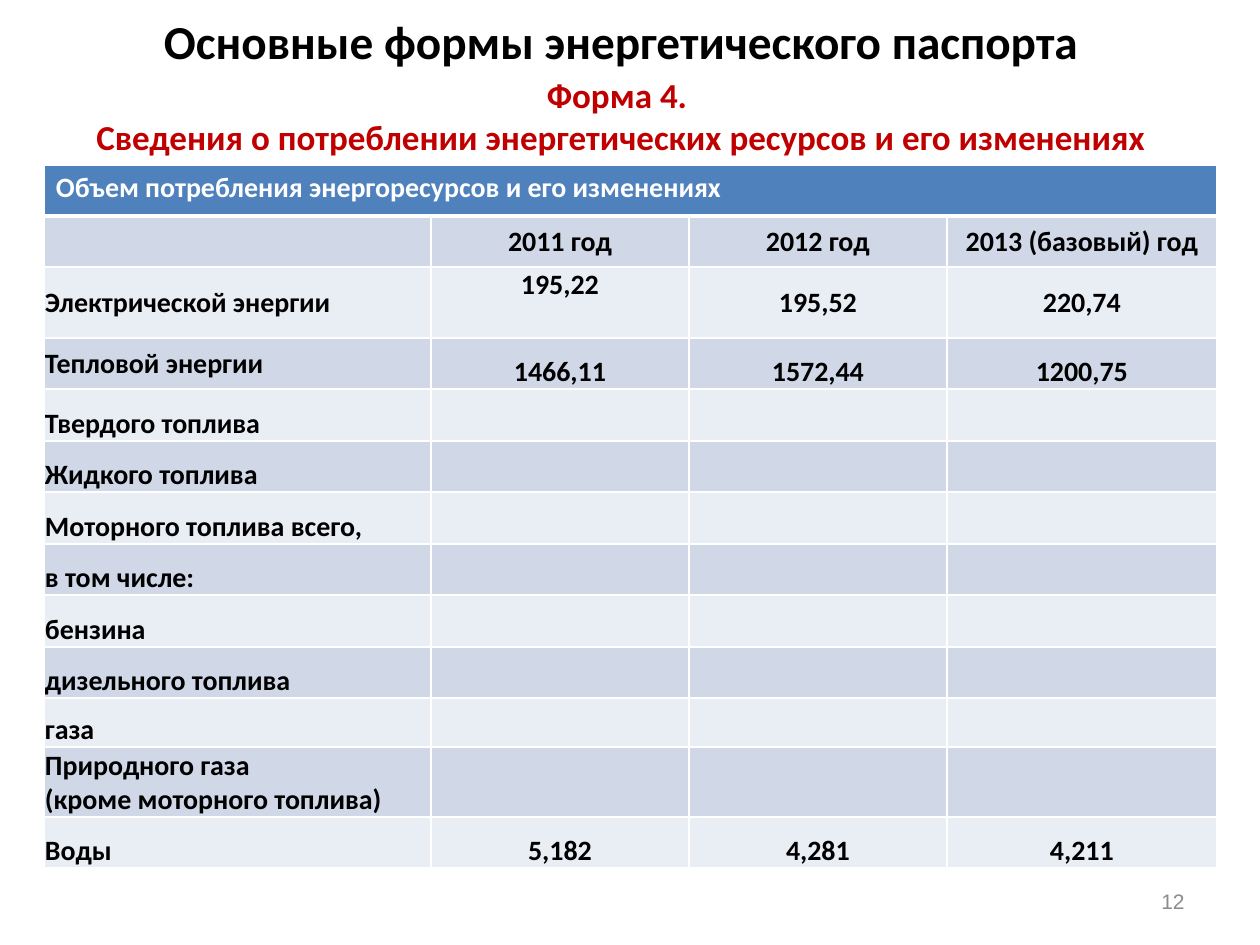
from dataclasses import dataclass

from lxml import etree
from pptx import Presentation
from pptx.dml.color import RGBColor
from pptx.enum.text import MSO_ANCHOR, PP_ALIGN
from pptx.oxml.ns import qn
from pptx.slide import Slide
from pptx.util import Pt

LEFT, CENTER, RIGHT = PP_ALIGN.LEFT, PP_ALIGN.CENTER, PP_ALIGN.RIGHT
TOP, MIDDLE, BOTTOM = MSO_ANCHOR.TOP, MSO_ANCHOR.MIDDLE, MSO_ANCHOR.BOTTOM
BLACK = RGBColor(0x00, 0x00, 0x00)
WHITE = RGBColor(0xFF, 0xFF, 0xFF)
RED = RGBColor(0xC0, 0x00, 0x00)
GRAY = RGBColor(0x8C, 0x8C, 0x8C)
BLUE = RGBColor(0x4F, 0x81, 0xBD)
BANDS = RGBColor(0xD0, 0xD8, 0xE8), RGBColor(0xE9, 0xED, 0xF4)

COLUMN_WIDTHS = [387, 258, 258, 270]
ROW_HEIGHTS = [51, 51, 71, 51, 52, 51, 52, 51, 52, 51, 49, 70, 51]
TABLE_TITLE = "Объем потребления энергоресурсов и его изменениях"
ROWS = [
    (["", "2011 год", "2012 год", "2013 (базовый) год"], [MIDDLE] * 4),
    (["Электрической энергии", "195,22", "195,52", "220,74"], [MIDDLE, TOP, MIDDLE, MIDDLE]),
    (["Тепловой энергии", "1466,11", "1572,44", "1200,75"], [MIDDLE, BOTTOM, BOTTOM, BOTTOM]),
    *[
        ([resource, "", "", ""], [BOTTOM] * 4)
        for resource in (
            "Твердого топлива",
            "Жидкого топлива",
            "Моторного топлива всего,",
            "в том числе:",
            "бензина",
            "дизельного топлива",
            "газа",
            "Природного газа\n(кроме моторного топлива)",
        )
    ],
    (["Воды", "5,182", "4,281", "4,211"], [BOTTOM] * 4),
]


def px(length):
    """Turn pixels into EMU."""
    return round(length * 914400 / 126)


@dataclass
class SlideBuilder:
    """Holds the slide and its text style and draws each kind of element."""

    slide: Slide
    font: str = "Calibri"
    bold: bool = True

    def add_lines(self, paragraph, lines, size, color, align, font=None, bold=None):
        """Add lines to one paragraph, run by run."""
        paragraph.alignment = align
        for index, line in enumerate(lines):
            if index:
                paragraph.add_line_break()
            run = paragraph.add_run()
            run.text = line
            run.font.name = font or self.font
            run.font.size = Pt(size)
            run.font.bold = self.bold if bold is None else bold
            run.font.color.rgb = color

    def text(self, box, lines, size, color, align=CENTER, **style):
        """Add a text box centred vertically."""
        frame = self.slide.shapes.add_textbox(*map(px, box)).text_frame
        frame.word_wrap = True
        frame.vertical_anchor = MIDDLE
        self.add_lines(frame.paragraphs[0], lines, size, color, align, **style)

    def border(self, cell, side, width):
        """Draw a white line on one side of a cell."""
        line = etree.SubElement(cell._tc.get_or_add_tcPr(), qn(f"a:ln{side}"), w=str(Pt(width)))
        fill = etree.SubElement(line, qn("a:solidFill"))
        etree.SubElement(fill, qn("a:srgbClr"), val=str(WHITE))

    def cell(self, cell, text, fill, color=BLACK, align=LEFT, anchor=TOP, margins=(1, 1, 1, 0), bottom=1):
        """Style and fill in one table cell."""
        for side, width in zip("LRTB", (1, 1, 1, bottom)):
            self.border(cell, side, width)
        cell.fill.solid()
        cell.fill.fore_color.rgb = fill
        cell.margin_left, cell.margin_top, cell.margin_right, cell.margin_bottom = map(px, margins)
        cell.vertical_anchor = anchor
        for index, line in enumerate(text.split("\n") if text else []):
            frame = cell.text_frame
            paragraph = frame.add_paragraph() if index else frame.paragraphs[0]
            self.add_lines(paragraph, [line], 16, color, align)

    def table(self, left, top, title, rows):
        """Add the banded table under a merged title row."""
        box = left, top, sum(COLUMN_WIDTHS), sum(ROW_HEIGHTS)
        frame = self.slide.shapes.add_table(len(ROW_HEIGHTS), len(COLUMN_WIDTHS), *map(px, box))
        table = frame.table
        for column, width in zip(table.columns, COLUMN_WIDTHS):
            column.width = px(width)
        for row, height in zip(table.rows, ROW_HEIGHTS):
            row.height = px(height)
        for index in range(len(COLUMN_WIDTHS)):
            self.cell(table.cell(0, index), "" if index else title, BLUE, WHITE, margins=(12, 6, 12, 6), bottom=3)
        table.cell(0, 0).merge(table.cell(0, len(COLUMN_WIDTHS) - 1))
        for row_index, (texts, anchors) in enumerate(rows, 1):
            fill = BANDS[(row_index - 1) % 2]
            for index, (text, anchor) in enumerate(zip(texts, anchors)):
                align = CENTER if index else LEFT
                self.cell(table.cell(row_index, index), text, fill, align=align, anchor=anchor)


def main():
    """Build and save the energy passport slide."""
    presentation = Presentation()
    presentation.slide_width, presentation.slide_height = px(1260), px(945)
    builder = SlideBuilder(presentation.slides.add_slide(presentation.slide_layouts[6]))
    subtitle = ["Форма 4. ", "Сведения о потреблении энергетических ресурсов и его изменениях"]
    builder.text((54, 66, 1134, 99), subtitle, 20, RED)
    builder.table(44, 165, TABLE_TITLE, ROWS)
    builder.text((903, 876, 294, 50), ["12"], 12, GRAY, RIGHT, font="Arial", bold=False)
    builder.text((54, 6, 1134, 69), ["Основные формы энергетического паспорта"], 27, BLACK)
    presentation.save("out.pptx")


if __name__ == "__main__":
    main()
